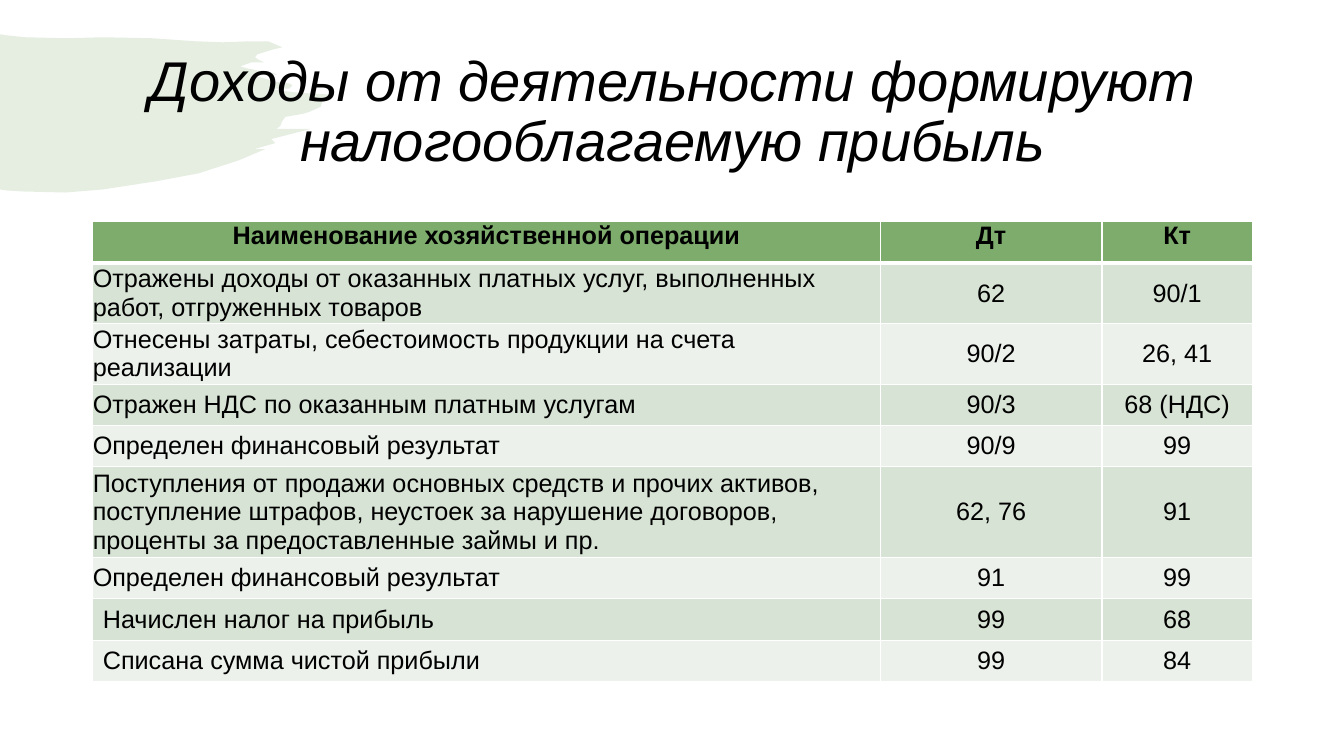
from dataclasses import dataclass

from lxml import etree
from pptx import Presentation
from pptx.dml.color import RGBColor
from pptx.enum.text import MSO_ANCHOR, PP_ALIGN
from pptx.oxml.ns import qn
from pptx.util import Pt

PX = 9144
LEFT, CENTER = PP_ALIGN.LEFT, PP_ALIGN.CENTER
TOP, MIDDLE = MSO_ANCHOR.TOP, MSO_ANCHOR.MIDDLE


@dataclass(frozen=True)
class Theme:
    """Colours, font and type sizes of the slide."""
    font: str = "Arial"
    title_size: int = 40
    table_size: int = 18
    ink: str = "000000"
    green: str = "7DAC6C"
    bands: tuple = ("D7E3D4", "ECF1EB")
    border: str = "FFFFFF"
    brush_alpha: int = 20


THEME = Theme()
TITLE = "Доходы от деятельности формируют налогооблагаемую прибыль"
HEADER = ("Наименование хозяйственной операции", "Дт", "Кт")
OPERATIONS = [
    ("Отражены доходы от оказанных платных услуг, выполненных работ, отгруженных товаров", "62", "90/1"),
    ("Отнесены затраты, себестоимость продукции на счета реализации", "90/2", "26, 41"),
    ("Отражен НДС по оказанным платным услугам", "90/3", "68 (НДС)"),
    ("Определен финансовый результат", "90/9", "99"),
    ("Поступления от продажи основных средств и прочих активов, поступление штрафов, "
     "неустоек за нарушение договоров, проценты за предоставленные займы и пр.", "62, 76", "91"),
    ("Определен финансовый результат", "91", "99"),
    ("Начислен налог на прибыль", "99", "68"),
    ("Списана сумма чистой прибыли", "99", "84"),
]
PADDED_ROWS = 2
COLUMN_WIDTHS = (781, 220, 149)
ROW_HEIGHT = 41
BRUSH_OUTLINE = [
    (0, 34), (6, 35), (25, 37), (66, 38), (102, 37), (151, 38), (194, 41), (221, 42),
    (248, 41), (266, 41), (280, 47), (271, 49), (255, 54), (253, 57), (256, 59), (262, 62),
    (249, 62), (238, 66), (246, 68), (256, 70), (266, 71), (275, 74), (251, 75), (263, 78),
    (273, 81), (280, 82), (288, 83), (290, 85), (287, 88), (284, 88), (263, 88), (296, 92),
    (330, 94), (321, 97), (318, 106), (307, 111), (300, 113), (283, 116), (280, 120),
    (278, 125), (274, 128), (308, 128), (269, 138), (273, 142), (252, 148), (263, 148),
    (237, 159), (197, 172), (154, 180), (102, 188), (65, 191), (23, 190), (7, 189), (0, 188),
]


def write_text(frame, text, *, size, align=CENTER, bold=False, italic=False, spacing=None):
    """Put one formatted paragraph into a text frame."""
    paragraph = frame.paragraphs[0]
    paragraph.alignment = align
    if spacing:
        paragraph.line_spacing = spacing
    run = paragraph.add_run()
    run.text = text
    run.font.name = THEME.font
    run.font.size = Pt(size)
    run.font.bold = bold
    run.font.italic = italic
    run.font.color.rgb = RGBColor.from_string(THEME.ink)


def add_brush_stroke(slide):
    """Draw the pale brush stroke at the left edge."""
    builder = slide.shapes.build_freeform(*BRUSH_OUTLINE[0], scale=PX)
    builder.add_line_segments(BRUSH_OUTLINE[1:], close=True)
    stroke = builder.convert_to_shape()
    stroke.shadow.inherit = False
    stroke.line.fill.background()
    stroke.fill.solid()
    stroke.fill.fore_color.rgb = RGBColor.from_string(THEME.green)
    colour = stroke.fill._xPr.find(qn("a:solidFill"))[0]
    etree.SubElement(colour, qn("a:alpha"), val=str(THEME.brush_alpha * 1000))


def add_title(slide):
    """Add the centred slide title."""
    frame = slide.shapes.add_textbox(92 * PX, 40 * PX, 1150 * PX, 145 * PX).text_frame
    frame.word_wrap = True
    frame.vertical_anchor = MIDDLE
    write_text(frame, TITLE, size=THEME.title_size, italic=True, spacing=0.9)


def set_borders(cell, bottom_width):
    """Give a cell white borders, ahead of its fill in the XML."""
    properties = cell._tc.get_or_add_tcPr()
    widths = {"a:lnL": 1, "a:lnR": 1, "a:lnT": 1, "a:lnB": bottom_width}
    for position, (tag, width) in enumerate(widths.items()):
        edge = etree.Element(qn(tag), w=str(Pt(width)))
        fill = etree.SubElement(edge, qn("a:solidFill"))
        etree.SubElement(fill, qn("a:srgbClr"), val=THEME.border)
        properties.insert(position, edge)


def fill_cell(cell, text, *, colour, align, header, padded):
    """Set the text, fill, margins and borders of a cell."""
    cell.margin_left = cell.margin_right = 10 * PX if padded else 0
    cell.margin_top = cell.margin_bottom = 5 * PX if padded else 0
    cell.vertical_anchor = TOP if header else MIDDLE
    cell.fill.solid()
    cell.fill.fore_color.rgb = RGBColor.from_string(colour)
    write_text(cell.text_frame, text, size=THEME.table_size, align=align, bold=header)
    set_borders(cell, 3 if header else 1)


def add_operations_table(slide):
    """Add the table of operations with debit and credit accounts."""
    rows = [HEADER, *OPERATIONS]
    table = slide.shapes.add_table(
        len(rows), len(HEADER), 92 * PX, 220 * PX,
        sum(COLUMN_WIDTHS) * PX, len(rows) * ROW_HEIGHT * PX).table
    for column, width in zip(table.columns, COLUMN_WIDTHS):
        column.width = width * PX
    for row_index, row in enumerate(rows):
        header = row_index == 0
        colour = THEME.green if header else THEME.bands[(row_index - 1) % 2]
        for column_index, text in enumerate(row):
            fill_cell(table.cell(row_index, column_index), text, colour=colour,
                      align=CENTER if header or column_index else LEFT,
                      header=header, padded=row_index >= len(rows) - PADDED_ROWS)


def main():
    """Build and save the slide."""
    presentation = Presentation()
    presentation.slide_width = 1333 * PX
    presentation.slide_height = 750 * PX
    slide = presentation.slides.add_slide(presentation.slide_layouts[6])
    add_brush_stroke(slide)
    add_title(slide)
    add_operations_table(slide)
    presentation.save("out.pptx")


if __name__ == "__main__":
    main()
